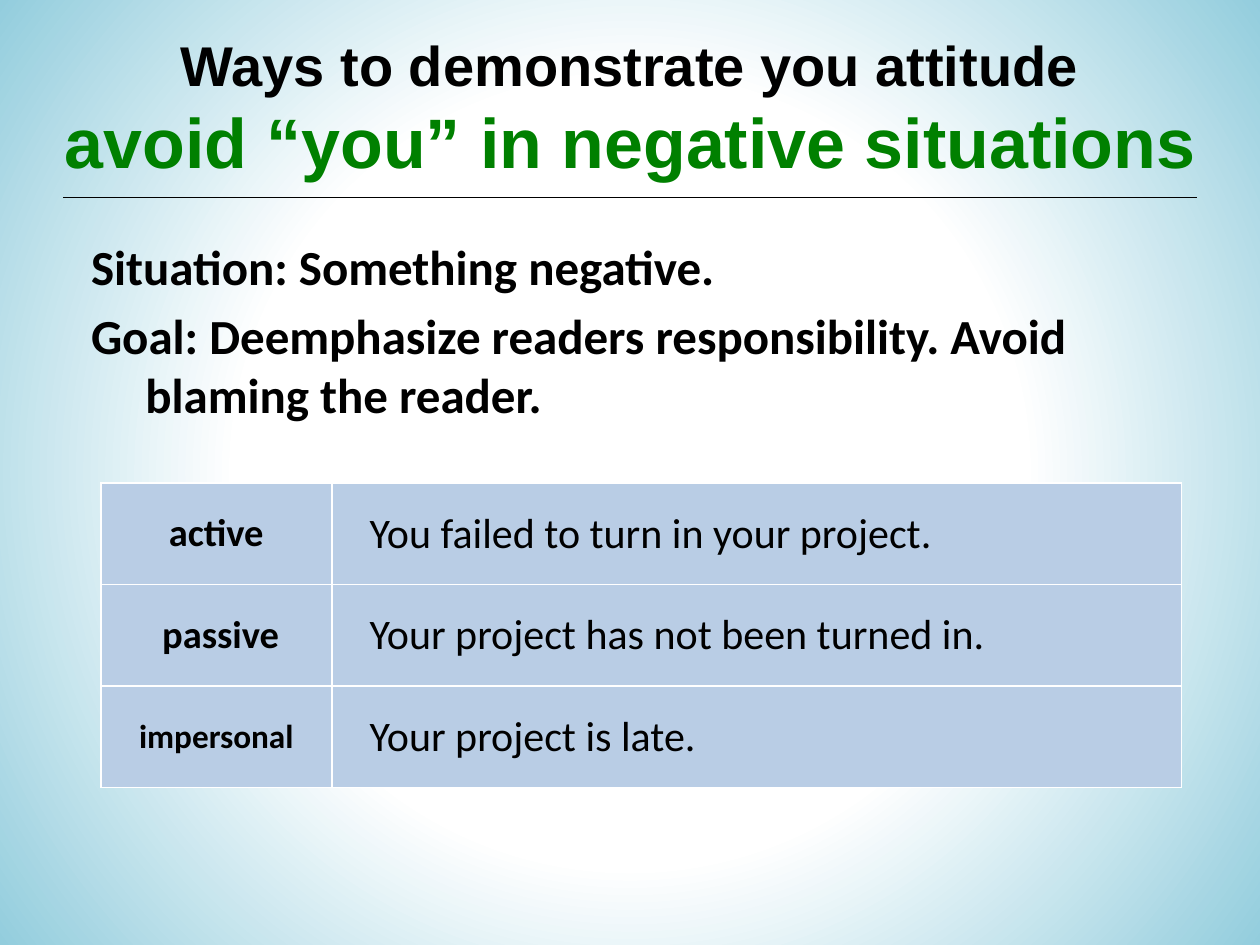
from pptx import Presentation
from pptx.dml.color import RGBColor
from pptx.enum.shapes import MSO_CONNECTOR
from pptx.enum.text import MSO_ANCHOR, PP_ALIGN
from pptx.oxml import parse_xml
from pptx.oxml.ns import nsdecls
from pptx.util import Pt

LEFT, CENTER = PP_ALIGN.LEFT, PP_ALIGN.CENTER
TOP, MIDDLE = MSO_ANCHOR.TOP, MSO_ANCHOR.MIDDLE
STRAIGHT = MSO_CONNECTOR.STRAIGHT

BLACK, GREEN, WHITE, SKY, CELL_BLUE = "000000", "008000", "FFFFFF", "93CDDD", "B9CDE5"

TITLE_LINES = [
    ("Ways to demonstrate you attitude", 32, BLACK),
    ("avoid “you” in negative situations", 40, GREEN),
]
POINTS = [
    "Situation: Something negative.",
    "Goal: Deemphasize readers responsibility. Avoid blaming the reader.",
]
# voice, size of the voice label, example sentence
VOICES = [
    ("active", 22, "You failed to turn in your project."),
    (" passive", 22, "Your project has not been turned in."),
    ("impersonal", 19, "Your project is late."),
]

TITLE_BOX = (0, 5, 720, 111.6)
POINTS_BOX = (36, 131.8, 648, 336)
RULE = (36, 113, 684, 113)
TABLE_LEFT, TABLE_TOP = 57.6, 276
COLUMN_WIDTHS = (132, 485.5)
ROW_HEIGHT = 58
CELL_MARGINS = {"margin_left": Pt(21.6), "margin_right": Pt(21.6),
                "margin_top": Pt(14.4), "margin_bottom": Pt(14.4)}


def rgb(hex_string):
    return RGBColor.from_string(hex_string)


def set_all(target, values):
    for name, value in values.items():
        setattr(target, name, value)


def add_run(paragraph, text, size, font="Calibri", color=BLACK, bold=True):
    run = paragraph.add_run()
    run.text = text
    set_all(run.font, {"size": Pt(size), "name": font, "bold": bold})
    run.font.color.rgb = rgb(color)


def add_text_frame(slide, box, anchor):
    frame = slide.shapes.add_textbox(*map(Pt, box)).text_frame
    set_all(frame, {"word_wrap": True, "vertical_anchor": anchor})
    return frame


def add_background(slide):
    """Radial gradient from a white centre to sky blue edges."""
    stops = "".join(
        f'<a:gs pos="{percent * 1000}"><a:srgbClr val="{color}"/></a:gs>'
        for percent, color in ((50, WHITE), (100, SKY)))
    slide.element.cSld.insert(0, parse_xml(
        f'<p:bg {nsdecls("p", "a")}><p:bgPr><a:gradFill rotWithShape="1">'
        f'<a:gsLst>{stops}</a:gsLst><a:path path="circle">'
        '<a:fillToRect l="50000" t="50000" r="50000" b="50000"/></a:path>'
        '</a:gradFill><a:effectLst/></p:bgPr></p:bg>'))


def add_title(slide):
    paragraph = add_text_frame(slide, TITLE_BOX, MIDDLE).paragraphs[0]
    paragraph.alignment = CENTER
    for number, (text, size, color) in enumerate(TITLE_LINES):
        if number:
            paragraph.add_line_break()
        add_run(paragraph, text, size, "Arial", color)


def add_rule(slide):
    rule = slide.shapes.add_connector(STRAIGHT, *map(Pt, RULE))
    rule.line.color.rgb = rgb(BLACK)
    rule.line.width = Pt(0.75)
    rule.element.spPr.append(parse_xml(f'<a:effectLst {nsdecls("a")}/>'))


def add_points(slide):
    frame = add_text_frame(slide, POINTS_BOX, TOP)
    for number, text in enumerate(POINTS):
        paragraph = frame.add_paragraph() if number else frame.paragraphs[0]
        paragraph.space_before = Pt(5.6)
        hanging = paragraph._p.get_or_add_pPr()
        hanging.set("marL", str(Pt(40)))
        hanging.set("indent", str(Pt(-31)))
        add_run(paragraph, text, 28)


def add_borders(cell):
    properties = cell._tc.get_or_add_tcPr()
    for position, side in enumerate(("lnL", "lnR", "lnT", "lnB")):
        properties.insert(position, parse_xml(
            f'<a:{side} {nsdecls("a")} w="{Pt(1)}"><a:solidFill>'
            f'<a:srgbClr val="{WHITE}"/></a:solidFill></a:{side}>'))


def fill_cell(cell, text, size, alignment, bold):
    set_all(cell, {"vertical_anchor": MIDDLE, **CELL_MARGINS})
    cell.fill.solid()
    cell.fill.fore_color.rgb = rgb(CELL_BLUE)
    add_borders(cell)
    paragraph = cell.text_frame.paragraphs[0]
    paragraph.alignment = alignment
    add_run(paragraph, text, size, bold=bold)


def add_voices(slide):
    table = slide.shapes.add_table(
        len(VOICES), len(COLUMN_WIDTHS), Pt(TABLE_LEFT), Pt(TABLE_TOP),
        Pt(sum(COLUMN_WIDTHS)), Pt(ROW_HEIGHT * len(VOICES))).table
    set_all(table, {"first_row": False, "horz_banding": False})
    for column, width in zip(table.columns, COLUMN_WIDTHS):
        column.width = Pt(width)
    for row, (voice, size, example) in enumerate(VOICES):
        fill_cell(table.cell(row, 0), voice, size, CENTER, True)
        fill_cell(table.cell(row, 1), example, 24, LEFT, False)


def main():
    presentation = Presentation()
    set_all(presentation, {"slide_width": Pt(720), "slide_height": Pt(540)})
    slide = presentation.slides.add_slide(presentation.slide_layouts[6])
    for add_part in (add_background, add_title, add_points, add_rule, add_voices):
        add_part(slide)
    presentation.save("out.pptx")


if __name__ == "__main__":
    main()
